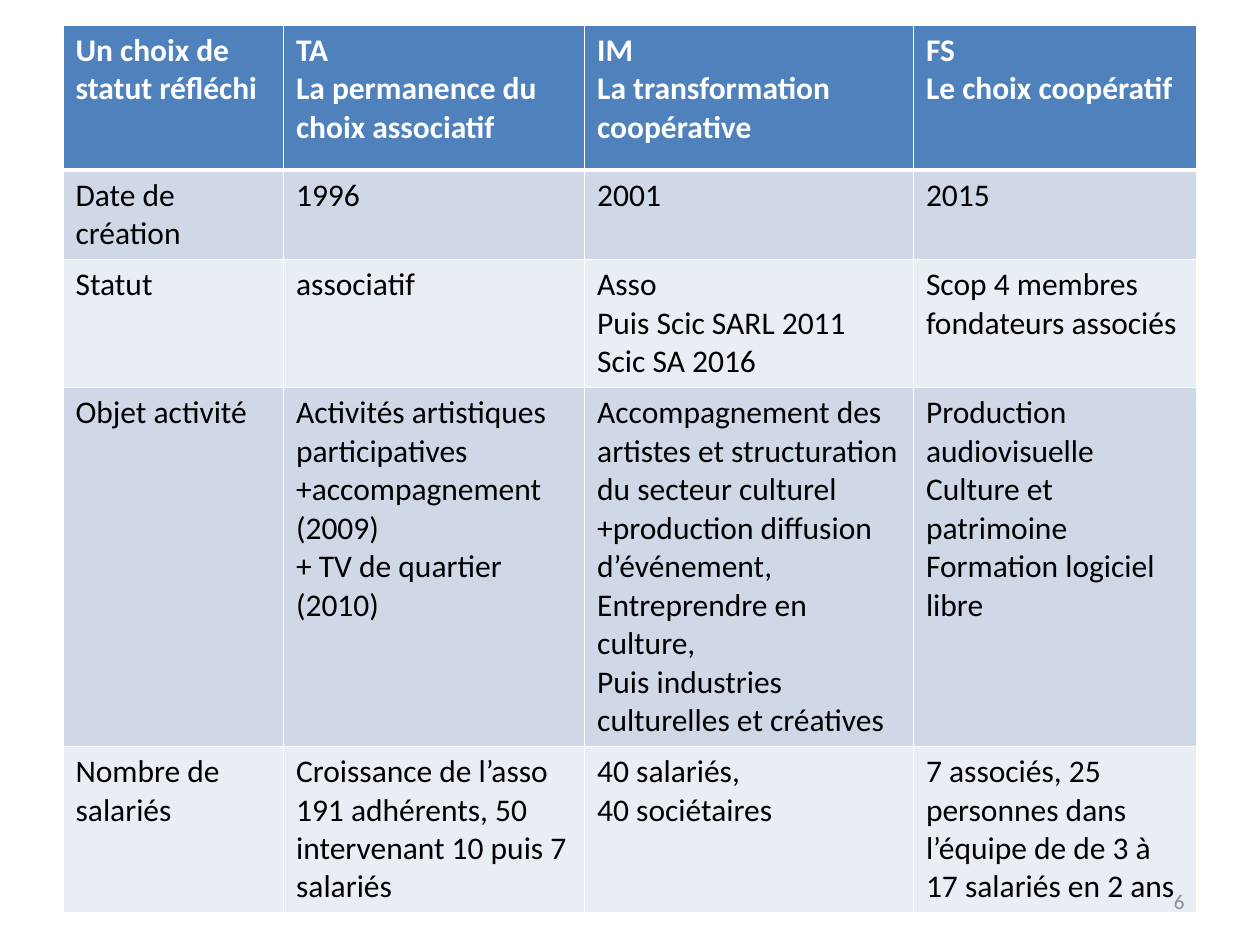
from pptx import Presentation
from pptx.dml.color import RGBColor
from pptx.enum.text import MSO_ANCHOR as Anchor, PP_ALIGN as Align
from pptx.oxml import parse_xml
from pptx.oxml.ns import nsdecls
from pptx.util import Inches, Pt

WHITE = RGBColor(0xFF, 0xFF, 0xFF)
BLACK = RGBColor(0, 0, 0)
GREY = RGBColor(0x8C, 0x8C, 0x8C)
BLUE = RGBColor(0x4F, 0x81, 0xBD)
BANDS = [RGBColor(0xE9, 0xED, 0xF4), RGBColor(0xD0, 0xD8, 0xE8)]
FONT = "Calibri"

WIDTHS = [1.75, 2.39, 2.61, 2.25]
HEIGHTS = [1.15, 0.7, 1, 2.8, 1.3]
ROWS = [
    ["Un choix de statut réfléchi",
     "TA\nLa permanence du choix associatif",
     "IM\nLa transformation coopérative",
     "FS\nLe choix coopératif"],
    ["Date de création", "1996", "2001", "2015"],
    ["Statut", "associatif",
     "Asso\nPuis Scic SARL 2011\nScic SA 2016",
     "Scop 4 membres fondateurs associés"],
    ["Objet activité",
     "Activités artistiques participatives\n+accompagnement (2009)\n"
     "+ TV de quartier (2010)",
     "Accompagnement des artistes et structuration du secteur culturel "
     "+production diffusion d’événement, Entreprendre en culture,\n"
     "Puis industries culturelles et créatives",
     "Production audiovisuelle\nCulture et patrimoine\n"
     "Formation logiciel libre"],
    ["Nombre de salariés",
     "Croissance de l’asso 191 adhérents, 50 intervenant 10 puis 7 salariés",
     "40 salariés,\n40 sociétaires",
     "7 associés, 25 personnes dans l’équipe de de 3 à 17 salariés en 2 ans"],
]


def style(frame, size, color, bold=False, align=None):
    for para in frame.paragraphs:
        font = para.font
        font.name, font.size, font.bold = FONT, Pt(size), bold
        font.color.rgb = color
        para.alignment = align


def border(cell, top, bottom):
    props = cell._tc.get_or_add_tcPr()
    for side, width in (("L", 1), ("R", 1), ("T", top), ("B", bottom)):
        props.append(parse_xml(
            f'<a:ln{side} {nsdecls("a")} w="{Pt(width)}"><a:solidFill>'
            f'<a:srgbClr val="{WHITE}"/></a:solidFill></a:ln{side}>'))


def add_grid(slide, left, top, width, height):
    table = slide.shapes.add_table(
        len(ROWS), len(WIDTHS), left, top, width, height).table
    for col, size in zip(table.columns, WIDTHS):
        col.width = Inches(size)
    for i, (row, size, texts) in enumerate(zip(table.rows, HEIGHTS, ROWS)):
        row.height = Inches(size)
        head = i == 0
        for cell, text in zip(row.cells, texts):
            cell.text = text
            style(cell.text_frame, 18, WHITE if head else BLACK, head)
            # A thick rule parts the header from the body
            border(cell, 3 if i == 1 else 1, 3 if head else 1)
            cell.fill.solid()
            cell.fill.fore_color.rgb = BLUE if head else BANDS[i % 2]


def add_number(slide, left, top, width, height):
    frame = slide.shapes.add_textbox(left, top, width, height).text_frame
    frame.word_wrap = True
    frame.vertical_anchor = Anchor.MIDDLE
    frame.text = "6"
    style(frame, 12, GREY, align=Align.RIGHT)


def main():
    deck = Presentation()
    deck.slide_width, deck.slide_height = Inches(10), Inches(7.5)
    slide = deck.slides.add_slide(deck.slide_layouts[6])
    # Comparison table
    add_grid(slide, Inches(0.5), Inches(0.2), Inches(9), Inches(6.95))
    # Slide number
    add_number(slide, Inches(7.17), Inches(6.95), Inches(2.33), Inches(0.4))
    deck.save("out.pptx")


if __name__ == "__main__":
    main()
